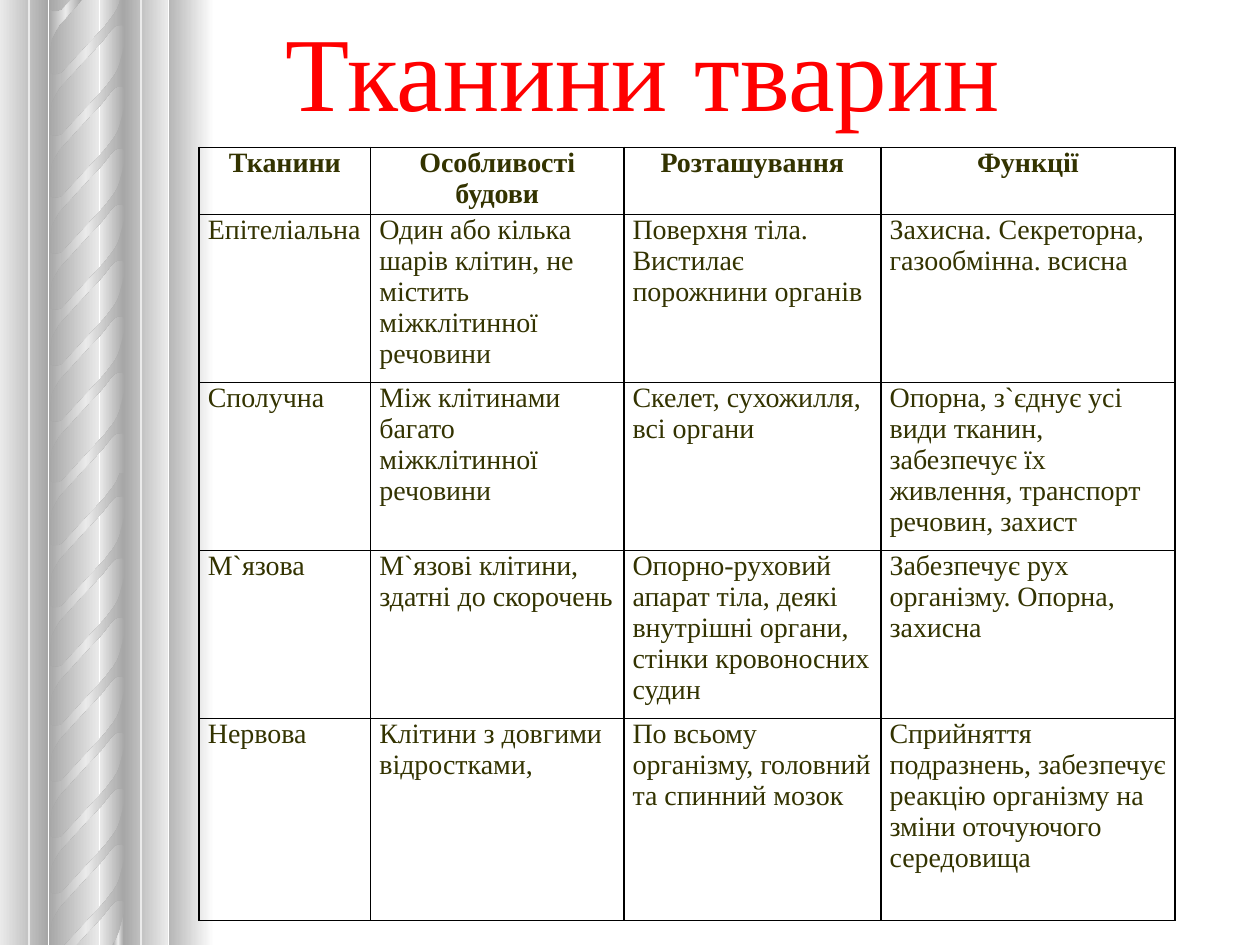
from lxml.etree import SubElement as Sub
from pptx import Presentation
from pptx.dml.color import RGBColor
from pptx.enum.shapes import MSO_CONNECTOR as Link, MSO_SHAPE as Shape
from pptx.enum.text import MSO_AUTO_SIZE as Fit, PP_ALIGN as Align
from pptx.oxml import parse_xml
from pptx.oxml.ns import nsdecls, qn
from pptx.util import Pt

LIGHT, GREY = "EAEAEA", "A7A7A7"
PILLAR = [(56.9, 14.4, (LIGHT, GREY)), (0, 27.4, (LIGHT, GREY)),
          (28.1, 28.8, (GREY, LIGHT)), (70.6, 25.2, (GREY, LIGHT))]
TWIST = [(70.6, 6.5), (70.6, 23.8), (69.8, 23), (67, 23), (65.5, 23.8),
         (63.4, 25.9), (58.3, 32.4), (46.1, 45.4), (33.8, 59), (31.7, 62.6),
         (29.5, 67), (28.8, 72.7), (28.1, 80.6), (28.1, 45.4), (28.1, 49),
         (28.8, 50.4), (30.2, 51.1), (31.7, 51.1), (33.1, 51.1), (35.3, 50.4),
         (59.8, 23.8), (64.8, 17.3), (67, 13.7), (68.4, 10), (69.8, 4.3),
         (70.6, 0), (70.6, 14.4)]
LOWER_TOPS = [330, *(363.6 + 32 * i for i in range(5)), 296, 260.6]
UPPER_TOPS = [*(62 + 32 * i for i in range(5)), 522, 26.6, -8.6, -44.6, 224.6]
HALVES = [(268.6, 271.4, LOWER_TOPS), (0, 270.6, UPPER_TOPS)]
COLS = [98, 144.7, 146.9, 168]
ROWS = [38, 96, 96, 96, 115.4]
TISSUES = [
    ["Тканини", "Особливості будови", "Розташування", "Функції"],
    ["Епітеліальна",
     "Один або кілька шарів клітин, не містить міжклітинної речовини",
     "Поверхня тіла. Вистилає порожнини органів",
     "Захисна. Секреторна, газообмінна. всисна"],
    ["Сполучна",
     "Між клітинами багато міжклітинної речовини",
     "Скелет, сухожилля, всі органи",
     "Опорна, з`єднує усі види тканин, забезпечує їх живлення, "
     "транспорт речовин, захист"],
    ["М`язова",
     "М`язові клітини, здатні до скорочень",
     "Опорно-руховий апарат тіла, деякі внутрішні органи, "
     "стінки кровоносних судин",
     "Забезпечує рух організму. Опорна, захисна"],
    ["Нервова",
     "Клітини з довгими відростками,",
     "По всьому організму, головний та спинний мозок",
     "Сприйняття подразнень, забезпечує реакцію організму на зміни "
     "оточуючого середовища"],
]


def rgb(value):
    return RGBColor.from_string(value)


def clip(points, low, high):
    out = []
    for (x0, y0), (x1, y1) in zip(points, points[1:] + points[:1]):
        if low <= y0 <= high:
            out.append((x0, y0))
        for y in sorted((low, high), reverse=y0 > y1):
            if (y0 - y) * (y1 - y) < 0:
                out.append((x0 + (x1 - x0) * (y - y0) / (y1 - y0), y))
    return out


class Painter:
    """Draws styled elements on one slide, with lengths in points."""

    font = "Times New Roman"
    border = "000000"

    def __init__(self, slide):
        self.shapes = slide.shapes

    def shade(self, sp, colors):
        sp.shadow.inherit = False
        sp.line.fill.background()
        sp.fill.gradient()
        sp.fill.gradient_angle = 0
        stops = next(sp._element.spPr.iter(qn("a:gsLst")))
        for stop in list(stops):
            stops.remove(stop)
        for i, color in enumerate(colors):
            gs = Sub(stops, qn("a:gs"), pos=str(100000 * i // (len(colors) - 1)))
            Sub(gs, qn("a:srgbClr"), val=color)

    def bar(self, x, y, w, h, colors):
        sp = self.shapes.add_shape(Shape.RECTANGLE, Pt(x), Pt(y), Pt(w), Pt(h))
        self.shade(sp, colors)

    def outline(self, points, colors):
        start, *rest = [(Pt(x), Pt(y)) for x, y in points]
        builder = self.shapes.build_freeform(*start)
        builder.add_line_segments(rest)
        self.shade(builder.convert_to_shape(), colors)

    def line(self, x0, y0, x1, y1, color):
        ln = self.shapes.add_connector(Link.STRAIGHT, Pt(x0), Pt(y0), Pt(x1), Pt(y1))
        ln.line.color.rgb = rgb(color)
        ln.line.width = Pt(1)
        Sub(ln._element.spPr, qn("a:effectLst"))

    def text(self, tf, text, color, **style):
        p = tf.paragraphs[0]
        r = p.add_run()
        r.text = text
        r.font.color.rgb = rgb(color)
        for name, value in {"name": self.font, **style}.items():
            setattr(r.font, name, value)
        return p

    def title(self, x, y, w, h, text, color, size):
        tf = self.shapes.add_textbox(Pt(x), Pt(y), Pt(w), Pt(h)).text_frame
        tf.word_wrap = False
        tf.auto_size = Fit.SHAPE_TO_FIT_TEXT
        self.text(tf, text, color, size=Pt(size))

    def frame(self, cell):
        props = cell._tc.get_or_add_tcPr()
        for i, side in enumerate("LRTB"):
            props.insert(i, parse_xml(
                f'<a:ln{side} {nsdecls("a")} w="{Pt(1)}"><a:solidFill>'
                f'<a:srgbClr val="{self.border}"/></a:solidFill></a:ln{side}>'))

    def table(self, x, y, cols, rows, data, color, size):
        tbl = self.shapes.add_table(len(rows), len(cols), Pt(x), Pt(y),
                                    Pt(sum(cols)), Pt(sum(rows))).table
        tbl.first_row = tbl.horz_banding = False
        for col, w in zip(tbl.columns, cols):
            col.width = Pt(w)
        margins = {"margin_left": 5, "margin_right": 5,
                   "margin_top": 0, "margin_bottom": 0}
        for i, (row, h, texts) in enumerate(zip(tbl.rows, rows, data)):
            row.height = Pt(h)
            for cell, text in zip(row.cells, texts):
                for name, value in margins.items():
                    setattr(cell, name, Pt(value))
                cell.fill.background()
                self.frame(cell)
                p = self.text(cell.text_frame, text, color, size=Pt(size), bold=i == 0)
                p.alignment = Align.LEFT if i else Align.CENTER


def main():
    prs = Presentation()
    prs.slide_width, prs.slide_height = Pt(720), Pt(540)
    s = Painter(prs.slides.add_slide(prs.slide_layouts[6]))
    for top, height, twist_tops in HALVES:
        for x, w, colors in PILLAR:
            s.bar(x, top, w, height, colors)
        for twist_top in twist_tops:
            points = [(x, twist_top + y) for x, y in TWIST]
            s.outline(clip(points, top, 540), (GREY, LIGHT, GREY))
    s.bar(96.5, 0, 25.9, 540, ("B6B6B6", "FFFFFF"))
    for x in (16.6, 80.6):
        s.line(x, 0, x, 540, LIGHT)
    s.title(156.2, 0, 427, 80, "Тканини тварин", "FF0000", 60)
    s.table(113.8, 84.2, COLS, ROWS, TISSUES, "333300", 16)
    prs.save("out.pptx")


if __name__ == "__main__":
    main()
